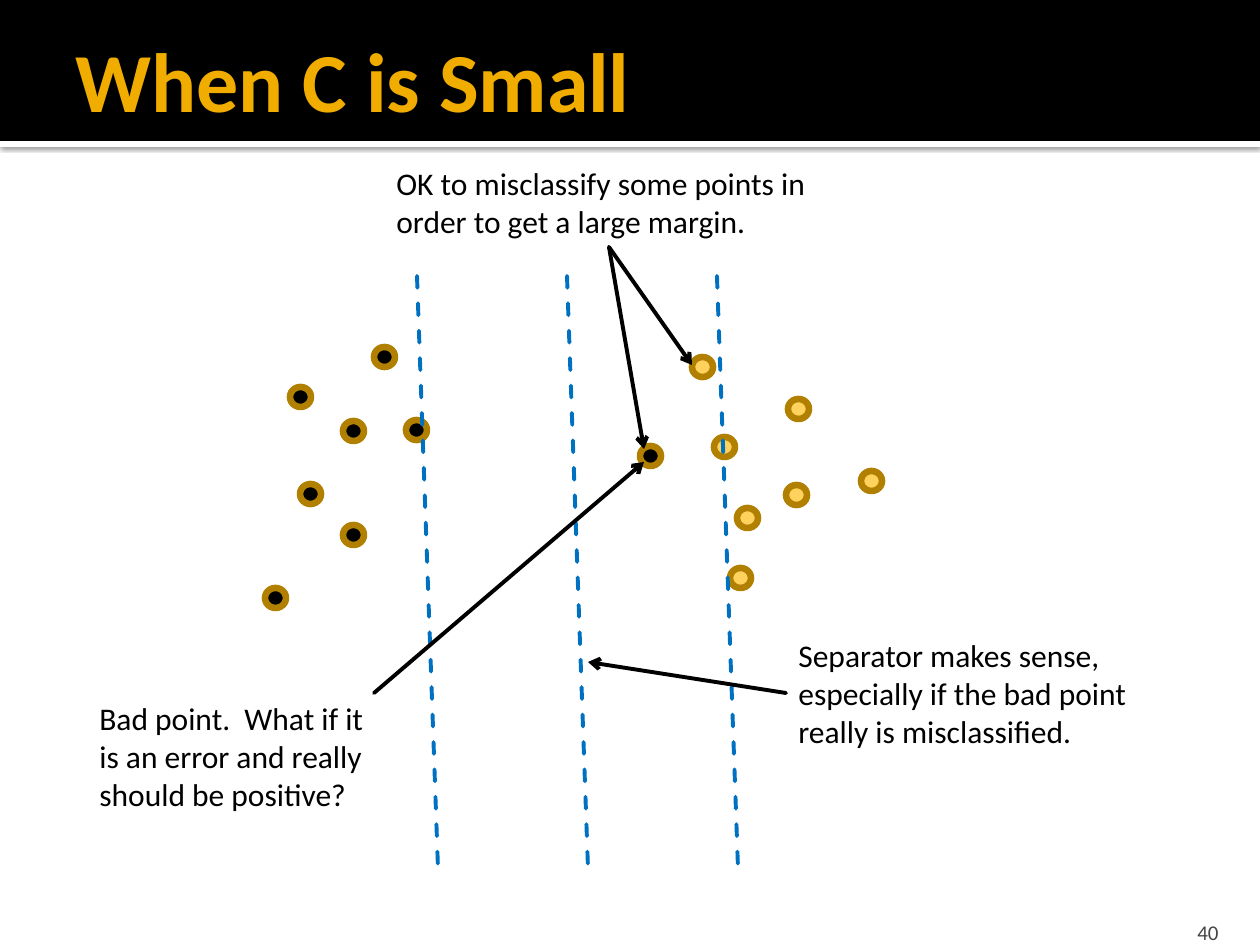
from collections import namedtuple
from dataclasses import dataclass

from lxml import etree
from pptx import Presentation
from pptx import util as u
from pptx.dml.color import RGBColor
from pptx.enum import dml, shapes, text
from pptx.oxml import ns

EMU_PER_PX = 914400 / 126
Box = namedtuple("Box", "left top width height")


@dataclass(frozen=True)
class Theme:
    font: str = "Calibri"
    black: str = "000000"
    white: str = "FFFFFF"
    gold: str = "F0AD00"
    dot_rim: str = "B28000"
    positive: str = "FFD25D"
    boundary: str = "0070C0"
    muted: str = "454545"
    title_size: int = 48
    body_size: int = 18
    number_size: int = 12
    line_width: float = 2.25
    rim_width: float = 3.78


THEME = Theme()


def px(length):
    return u.Emu(round(length * EMU_PER_PX))


def rgb(colour):
    return RGBColor.from_string(colour)


def add_filled(slide, kind, box, colour):
    filled = slide.shapes.add_shape(kind, *map(px, box))
    filled.shadow.inherit = False
    filled.fill.solid()
    filled.fill.fore_color.rgb = rgb(colour)
    filled.line.fill.background()
    return filled


def add_label(slide, box, words, size, colour, bold=False, wrap=True,
              anchor=text.MSO_ANCHOR.TOP, align=text.PP_ALIGN.LEFT):
    label = slide.shapes.add_textbox(*map(px, box))
    frame = label.text_frame
    frame.word_wrap = wrap
    frame.vertical_anchor = anchor
    frame.text = words
    for paragraph in frame.paragraphs:
        paragraph.alignment = align
        for run in paragraph.runs:
            run.font.name = THEME.font
            run.font.size = u.Pt(size)
            run.font.bold = bold
            run.font.color.rgb = rgb(colour)
    return frame


def add_line(slide, start, end, colour):
    line = slide.shapes.add_connector(
        shapes.MSO_CONNECTOR.STRAIGHT, *map(px, (*start, *end)))
    line.line.color.rgb = rgb(colour)
    line.line.width = u.Pt(THEME.line_width)
    line.line._get_or_add_ln().set("cap", "rnd")
    etree.SubElement(line._element.spPr, ns.qn("a:effectLst"))
    return line


def add_header(slide, box, title):
    rule_box = Box(box.left, box.top + box.height, box.width, 6)
    rule = add_filled(slide, shapes.MSO_SHAPE.RECTANGLE, rule_box, THEME.white)
    effects = rule._element.spPr.find(ns.qn("a:effectLst"))
    shadow = etree.SubElement(effects, ns.qn("a:outerShdw"), blurRad="31750",
                              dist="10160", dir="5400000", rotWithShape="0")
    tint = etree.SubElement(shadow, ns.qn("a:srgbClr"), val=THEME.black)
    etree.SubElement(tint, ns.qn("a:alpha"), val="60000")

    add_filled(slide, shapes.MSO_SHAPE.RECTANGLE, box, THEME.black)
    title_box = Box(box.left + 63, box.top + 21, box.width - 63, 116)
    frame = add_label(slide, title_box, title, THEME.title_size, THEME.gold,
                      bold=True, anchor=text.MSO_ANCHOR.MIDDLE)
    frame.margin_right = u.Inches(0.05)


def add_page_number(slide, box, number):
    frame = add_label(slide, box, number, THEME.number_size, THEME.muted,
                      anchor=text.MSO_ANCHOR.BOTTOM, align=text.PP_ALIGN.RIGHT)
    frame.margin_bottom = 0


def add_scatter(slide, box):
    negatives = [(40, 208), (83, 145), (83, 249), (5, 312),
                 (30, 111), (146, 144), (114, 71), (380, 170)]
    positives = [(454, 161), (470, 292), (528, 123), (601, 195),
                 (526, 209), (477, 232), (432, 81)]
    for points, colour in ((negatives, THEME.black), (positives, THEME.positive)):
        for x, y in points:
            dot_box = Box(box.left + x, box.top + y, 21, 20)
            dot = add_filled(slide, shapes.MSO_SHAPE.OVAL, dot_box, colour)
            dot.line.color.rgb = rgb(THEME.dot_rim)
            dot.line.width = u.Pt(THEME.rim_width)

    for position in range(3):
        x = box.left + 157 + 150 * position
        boundary = add_line(slide, (x, box.top), (x + 21, box.top + box.height),
                            THEME.boundary)
        boundary.line.dash_style = dml.MSO_LINE.DASH


def add_callout(slide, box, words, tail, heads):
    add_label(slide, box, words, THEME.body_size, THEME.black, wrap=False)
    start = (box.left + tail[0], box.top + tail[1])
    for x, y in heads:
        arrow = add_line(slide, start, (box.left + x, box.top + y), THEME.black)
        etree.SubElement(arrow.line._get_or_add_ln(), ns.qn("a:tailEnd"),
                         type="arrow")


def main():
    deck = Presentation()
    deck.slide_width, deck.slide_height = px(1260), px(945)
    slide = deck.slides.add_slide(deck.slide_layouts[6])

    add_header(slide, Box(0, 0, 1260, 141), "When C is Small")
    add_page_number(slide, Box(1130, 907, 101, 38), "40")
    add_scatter(slide, Box(260, 276, 622, 592))
    add_callout(slide, Box(87, 693, 292, 127),
                "Bad point.  What if it\nis an error and really\nshould be positive?",
                (287, 0), [(557, -231)])
    add_callout(slide, Box(384, 158, 447, 89),
                "OK to misclassify some points in\norder to get a large margin.",
                (225, 89), [(260, 291), (308, 207)])
    add_callout(slide, Box(786, 630, 359, 127),
                "Separator makes sense,\nespecially if the bad point\nreally is misclassified.",
                (0, 63), [(-198, 32)])
    deck.save("out.pptx")


if __name__ == "__main__":
    main()
